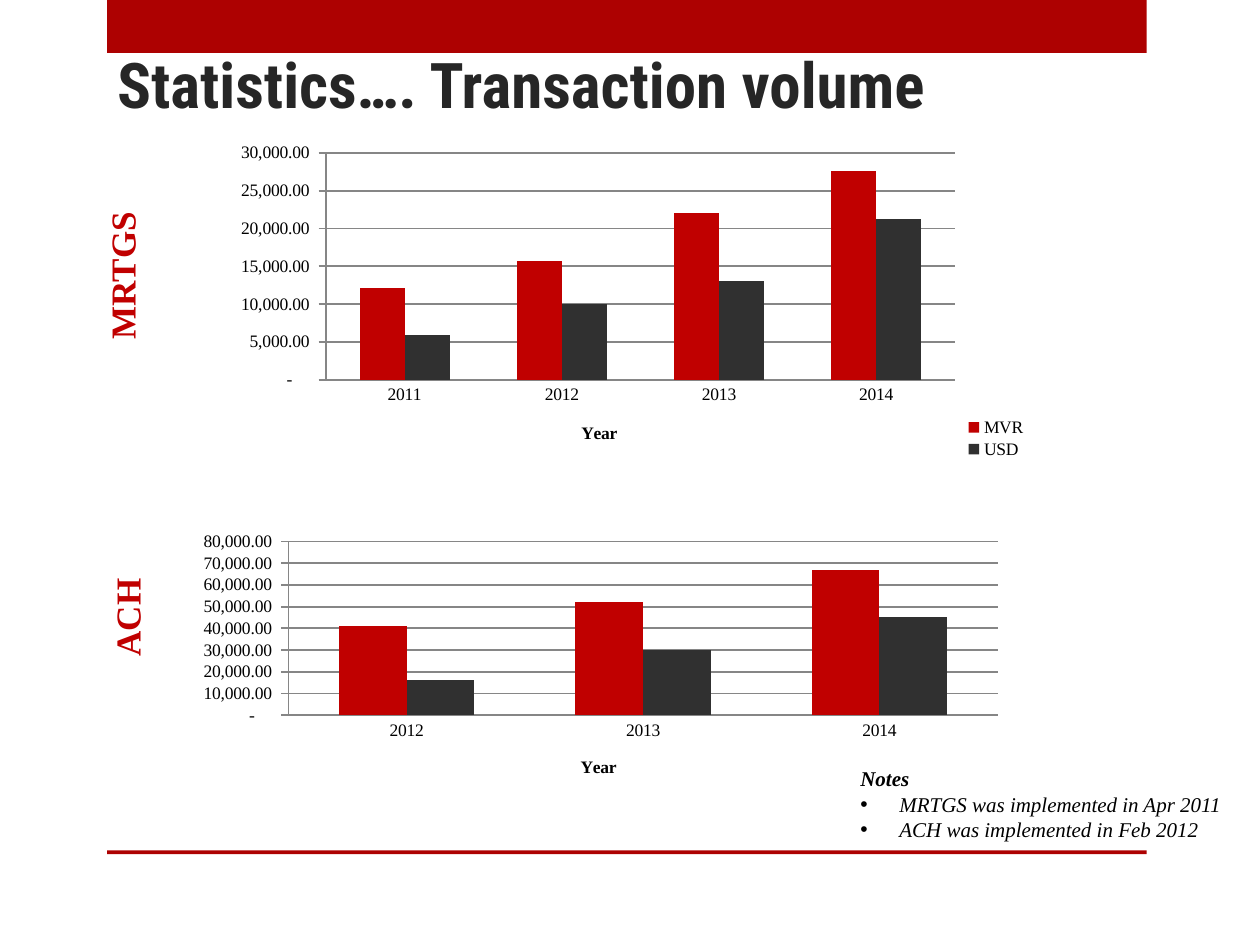
from dataclasses import dataclass
from typing import Optional

from pptx import Presentation
from pptx.chart.data import CategoryChartData as ChartData
from pptx.dml.color import RGBColor
from pptx.enum.chart import XL_CHART_TYPE as ChartType
from pptx.enum.chart import XL_LEGEND_POSITION as LegendPosition
from pptx.enum.chart import XL_TICK_MARK as TickMark
from pptx.enum.shapes import MSO_SHAPE as Preset
from pptx.enum.text import MSO_ANCHOR as Anchor
from pptx.enum.text import MSO_AUTO_SIZE as AutoSize
from pptx.enum.text import PP_ALIGN as Align
from pptx.oxml import parse_xml
from pptx.oxml.ns import nsdecls
from pptx.util import Inches, Pt

COLORS = {
    "band": "AD0101",
    "title": "262626",
    "red": "C00000",
    "dark": "303030",
    "grid": "868686",
    "text": "000000",
}
SERIF = "Times New Roman"
NUMBER_FORMAT = '_(* #,##0.00_);_(* \\(#,##0.00\\);_(* "-"??_);_(@_)'


@dataclass
class Box:
    left: float
    top: float
    width: float
    height: float

    def lengths(self) -> tuple:
        return tuple(map(Inches, (self.left, self.top, self.width, self.height)))


@dataclass
class SideLabel:
    text: str
    box: Box


@dataclass
class VolumeChart:
    box: Box
    years: list[str]
    series: dict[str, list[int]]
    maximum: int
    step: int
    plot: tuple
    year_title: tuple
    legend: Optional[tuple] = None


BANDS = [Box(0.85, 0, 8.25, 0.42), Box(0.85, 6.75, 8.25, 0.03)]
LABELS = [
    SideLabel("MRTGS", Box(0.75, 1.67, 0.54, 1.12)),
    SideLabel("ACH", Box(0.79, 4.58, 0.54, 0.73)),
]
NOTES = ["MRTGS was implemented in Apr 2011", "ACH was implemented in Feb 2012"]
CHARTS = [
    VolumeChart(
        Box(1.75, 1.08, 6.6, 2.58),
        ["2011", "2012", "2013", "2014"],
        {"MVR ": [12200, 15700, 22100, 27600], "USD": [5900, 10000, 13100, 21200]},
        30000, 5000,
        plot=(0.127, 0.052, 0.756, 0.698),
        year_title=(0.43, 0.87),
        legend=(0.87, 0.86, 0.13, 0.14),
    ),
    VolumeChart(
        Box(0.5, 3.65, 7.85, 2.58),
        ["2012", "2013", "2014"],
        {"Series 1": [41000, 52000, 67000], "Series 2": [16000, 30000, 45000]},
        80000, 10000,
        plot=(0.228, 0.251, 0.717, 0.535),
        year_title=(0.52, 0.9),
    ),
]


def format_font(font, color: str, **values) -> None:
    for name, value in values.items():
        setattr(font, name, value)
    font.color.rgb = RGBColor.from_string(COLORS[color])


def add_band(slide, box: Box) -> None:
    band = slide.shapes.add_shape(Preset.RECTANGLE, *box.lengths())
    band.shadow.inherit = False
    band.fill.solid()
    band.fill.fore_color.rgb = RGBColor.from_string(COLORS["band"])
    band.line.fill.background()


def set_title(slide, text: str, box: Box) -> None:
    title = slide.shapes.title
    title.left, title.top, title.width, title.height = box.lengths()
    frame = title.text_frame
    frame.vertical_anchor = Anchor.MIDDLE
    para = frame.paragraphs[0]
    para.alignment = Align.LEFT
    span = para.add_run()
    span.text = text
    format_font(span.font, "title", name="Roboto Condensed", size=Pt(36), bold=True)


def add_side_label(slide, label: SideLabel) -> None:
    frame = slide.shapes.add_textbox(*label.box.lengths()).text_frame
    frame.word_wrap = False
    frame.auto_size = AutoSize.SHAPE_TO_FIT_TEXT
    frame._txBody.bodyPr.set("vert", "vert270")
    span = frame.paragraphs[0].add_run()
    span.text = label.text
    format_font(span.font, "red", name=SERIF, size=Pt(20), bold=True)


def add_notes_box(slide, heading: str, items: list[str], box: Box) -> None:
    frame = slide.shapes.add_textbox(*box.lengths()).text_frame
    frame.word_wrap = True
    frame.auto_size = AutoSize.SHAPE_TO_FIT_TEXT
    for index, text in enumerate([heading, *items]):
        para = frame.add_paragraph() if index else frame.paragraphs[0]
        span = para.add_run()
        span.text = text
        format_font(span.font, "text", name=SERIF, size=Pt(12), bold=index == 0, italic=True)
        if index:
            properties = para._p.get_or_add_pPr()
            properties.set("marL", str(Inches(0.31)))
            properties.set("indent", str(-Inches(0.31)))
            properties.append(parse_xml(f'<a:buFont {nsdecls("a")} typeface="Arial"/>'))
            properties.append(parse_xml(f'<a:buChar {nsdecls("a")} char="•"/>'))


def place_part(part, index: int, fractions: tuple, inner: bool = False) -> None:
    for layout in part.xpath("./c:layout"):
        part.remove(layout)
    target = '<c:layoutTarget val="inner"/>' if inner else ""
    modes = '<c:xMode val="edge"/><c:yMode val="edge"/>'
    values = "".join(f'<c:{name} val="{value}"/>' for name, value in zip("xywh", fractions))
    part.insert(index, parse_xml(
        f'<c:layout {nsdecls("c")}><c:manualLayout>{target}{modes}{values}'
        "</c:manualLayout></c:layout>"
    ))


def format_axes(chart, volume: VolumeChart) -> None:
    years, amounts = chart.category_axis, chart.value_axis
    years.major_tick_mark = TickMark.NONE
    amounts.major_tick_mark = TickMark.CROSS
    amounts.minimum_scale, amounts.maximum_scale = 0, volume.maximum
    amounts.major_unit = volume.step
    amounts.has_major_gridlines = True
    amounts.tick_labels.number_format = NUMBER_FORMAT
    amounts.tick_labels.number_format_is_linked = False
    for line in (years.format.line, amounts.format.line, amounts.major_gridlines.format.line):
        line.color.rgb = RGBColor.from_string(COLORS["grid"])
        line.width = Pt(1)
    span = years.axis_title.text_frame.paragraphs[0].add_run()
    span.text = "Year"
    format_font(span.font, "text", name=SERIF, size=Pt(10), bold=True)


def add_volume_chart(slide, volume: VolumeChart) -> None:
    chart_data = ChartData(number_format=NUMBER_FORMAT)
    chart_data.categories = volume.years
    for name, values in volume.series.items():
        chart_data.add_series(name, values)
    chart = slide.shapes.add_chart(
        ChartType.COLUMN_CLUSTERED, *volume.box.lengths(), chart_data
    ).chart
    format_font(chart.font, "text", name=SERIF, size=Pt(10))
    chart.has_title = False
    bars = chart.plots[0]
    bars.vary_by_categories = False
    bars.gap_width, bars.overlap = 150, 0
    for series, color in zip(bars.series, ("red", "dark")):
        series.format.fill.solid()
        series.format.fill.fore_color.rgb = RGBColor.from_string(COLORS[color])
    format_axes(chart, volume)
    place_part(chart.element.xpath(".//c:plotArea")[0], 0, volume.plot, inner=True)
    place_part(chart.element.xpath(".//c:catAx/c:title")[0], 1, volume.year_title)
    chart.has_legend = volume.legend is not None
    if volume.legend:
        chart.legend.position = LegendPosition.RIGHT
        chart.legend.include_in_layout = False
        place_part(chart.element.xpath(".//c:legend")[0], 1, volume.legend)


def main() -> None:
    deck = Presentation()
    deck.slide_width, deck.slide_height = Inches(10), Inches(7.5)
    page = deck.slides.add_slide(deck.slide_layouts.get_by_name("Title Only"))
    for band in BANDS:
        add_band(page, band)
    set_title(page, "Statistics…. Transaction volume", Box(0.83, 0.08, 7.42, 1.17))
    for label in LABELS:
        add_side_label(page, label)
    add_notes_box(page, "Notes", NOTES, Box(6.73, 6.03, 3.25, 0.91))
    for volume in CHARTS:
        add_volume_chart(page, volume)
    deck.save("out.pptx")


if __name__ == "__main__":
    main()
